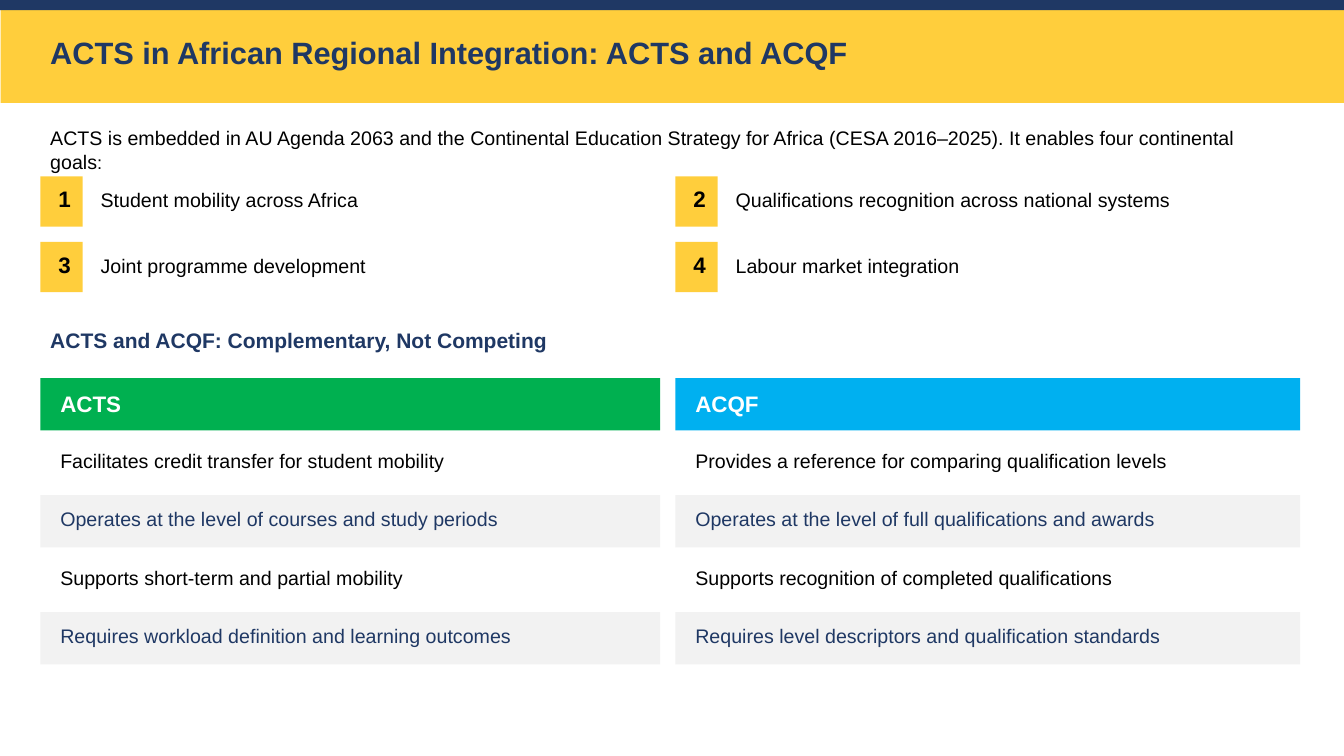
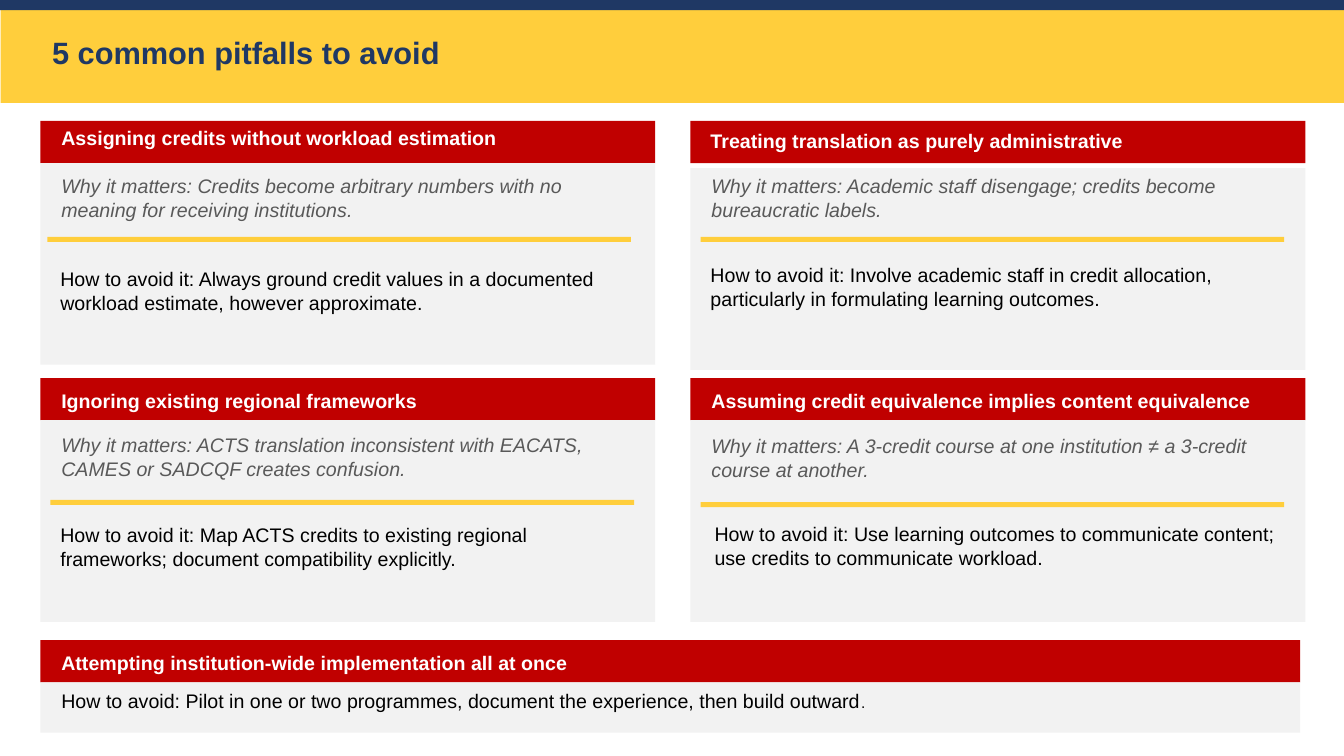
from pptx import Presentation
from pptx.dml.color import RGBColor
from pptx.enum.shapes import MSO_SHAPE as Preset
from pptx.enum.text import MSO_AUTO_SIZE as AutoSize, PP_ALIGN as Align
from pptx.util import Pt

NAVY = RGBColor(0x1F, 0x38, 0x64)
YELLOW = RGBColor(0xFF, 0xCE, 0x3C)
GREEN = RGBColor(0x00, 0xB0, 0x50)
SKY = RGBColor(0x00, 0xB0, 0xF0)
RED = RGBColor(0xC0, 0x00, 0x00)
PALE = RGBColor(0xF2, 0xF2, 0xF2)
GREY = RGBColor(0x59, 0x59, 0x59)
BLACK = RGBColor(0x00, 0x00, 0x00)
WHITE = RGBColor(0xFF, 0xFF, 0xFF)

WIDTH, HEIGHT = 960, 540
MARGIN = 28.8
FULL_WIDTH = 900

GOALS = [
    "Student mobility across Africa",
    "Qualifications recognition across national systems",
    "Joint programme development",
    "Labour market integration",
]
FRAMEWORKS = [
    (MARGIN, 442.8, GREEN, "ACTS", [
        "Facilitates credit transfer for student mobility",
        "Operates at the level of courses and study periods",
        "Supports short-term and partial mobility",
        "Requires workload definition and learning outcomes",
    ]),
    (482.4, 446.4, SKY, "ACQF", [
        "Provides a reference for comparing qualification levels",
        "Operates at the level of full qualifications and awards",
        "Supports recognition of completed qualifications",
        "Requires level descriptors and qualification standards",
    ]),
]
PITFALLS = [
    ("Assigning credits without workload estimation",
     "Why it matters: Credits become arbitrary numbers with no meaning for "
     "receiving institutions.",
     "How to avoid it: Always ground credit values in a documented workload "
     "estimate, however approximate.",
     {"head": (7.9, 0), "body": 30.2, "why": 34.6,
      "rule": (5, 82.8), "how": (7.2, 100.8)}),
    ("Treating translation as purely administrative",
     "Why it matters: Academic staff disengage; credits become bureaucratic "
     "labels.",
     "How to avoid it: Involve academic staff in credit allocation, "
     "particularly in formulating learning outcomes.",
     {"head": (7.2, 2.2), "body": 33.8, "why": 34.6,
      "rule": (7.2, 82.8), "how": (7.2, 97.9)}),
    ("Ignoring existing regional frameworks",
     "Why it matters: ACTS translation inconsistent with EACATS, CAMES or "
     "SADCQF creates confusion.",
     "How to avoid it: Map ACTS credits to existing regional frameworks; "
     "document compatibility explicitly.",
     {"head": (7.9, 4.3), "body": 30.2, "why": 36,
      "rule": (7.2, 87.1), "how": (7.2, 100.1)}),
    ("Assuming credit equivalence implies content equivalence",
     "Why it matters: A 3-credit course at one institution ≠ a 3-credit "
     "course at another.",
     "How to avoid it: Use learning outcomes to communicate content; use "
     "credits to communicate workload.",
     {"head": (7.9, 4.3), "body": 30.2, "why": 36.7,
      "rule": (7.2, 88.6), "how": (10.1, 99.4)}),
]


class Deck:
    font = "Arial"
    body_size = 14

    def __init__(self):
        self.prs = Presentation()
        self.prs.slide_width, self.prs.slide_height = Pt(WIDTH), Pt(HEIGHT)
        self.slide = None

    def new_slide(self, title, title_left=MARGIN):
        self.slide = self.prs.slides.add_slide(self.prs.slide_layouts[6])
        self.band(0.5, 0, WIDTH, 73.5, YELLOW)
        self.band(0, 0, WIDTH, 7.2, NAVY)
        self.text(title_left, 20.9, 864, 33.8, title, NAVY, 22, bold=True)

    def band(self, left, top, width, height, color):
        band = self.slide.shapes.add_shape(
            Preset.RECTANGLE, Pt(left), Pt(top), Pt(width), Pt(height))
        band.shadow.inherit = False
        band.fill.solid()
        band.fill.fore_color.rgb = color
        band.line.fill.background()

    def text(self, left, top, width, height, words, color=BLACK,
             size=body_size, bold=False, italic=False, align=Align.LEFT,
             ending="", ending_size=None):
        box = self.slide.shapes.add_textbox(
            Pt(left), Pt(top), Pt(width), Pt(height))
        frame = box.text_frame
        frame.word_wrap = True
        frame.auto_size = AutoSize.SHAPE_TO_FIT_TEXT
        paragraph = frame.paragraphs[0]
        paragraph.alignment = align
        for part, part_size in ((words, size), (ending, ending_size)):
            if part:
                run = paragraph.add_run()
                run.text = part
                run.font.name = self.font
                run.font.size = Pt(part_size)
                run.font.bold = bold
                run.font.italic = italic
                run.font.color.rgb = color

    def goal(self, left, top, number, words):
        self.band(left, top, 30.2, 36, YELLOW)
        self.text(left + 2.9, top + 2.9, 28.8, 32.4, str(number),
                  size=16, bold=True, align=Align.CENTER)
        self.text(left + 36, top + 5, 410.4, 32.4, words)

    def framework(self, left, width, color, name, points, top=270, pitch=41.8):
        rows = [(name, color, WHITE, 16)]
        for index, point in enumerate(points):
            fill, ink = (PALE, NAVY) if index % 2 else (WHITE, BLACK)
            rows.append((point, fill, ink, self.body_size))
        for index, (words, fill, ink, size) in enumerate(rows):
            y = top + index * pitch
            self.band(left, y, width, 37.4, fill)
            self.text(left + 7.2, y + 5, 432, 24.5, words, ink, size,
                      bold=index == 0)

    def panel(self, left, top, width, heading, head, body_top, body_height):
        self.band(left, top, width, 30.2, RED)
        self.text(left + head[0], top + head[1], width - 13.7, 24.5,
                  heading, WHITE, bold=True)
        self.band(left, top + body_top, width, body_height, PALE)

    def pitfall(self, left, top, heading, why, how, place):
        self.panel(left, top, 439.2, heading, place["head"], place["body"], 144)
        self.text(left + 7.9, top + place["why"], 425.5, 41, why, GREY,
                  italic=True)
        rule_x, rule_y = place["rule"]
        self.band(left + rule_x, top + rule_y, 416.9, 3.6, YELLOW)
        how_x, how_y = place["how"]
        self.text(left + how_x, top + how_y, 425.5, 41, how)


def integration_slide(deck):
    deck.new_slide("ACTS in African Regional Integration: ACTS and ACQF")
    deck.text(MARGIN, 86.4, FULL_WIDTH, 24.5,
              "ACTS is embedded in AU Agenda 2063 and the Continental Education "
              "Strategy for Africa (CESA 2016–2025). It enables four "
              "continental goals", ending=":", ending_size=13)
    for index, words in enumerate(GOALS):
        row, column = divmod(index, 2)
        deck.goal(MARGIN + column * 453.6, 126 + row * 46.8, index + 1, words)
    deck.text(MARGIN, 230.4, FULL_WIDTH, 28.8,
              "ACTS and ACQF: Complementary, Not Competing", NAVY, 15, bold=True)
    for framework in FRAMEWORKS:
        deck.framework(*framework)


def pitfalls_slide(deck):
    deck.new_slide("5 common pitfalls to avoid", 30.2)
    for index, pitfall in enumerate(PITFALLS):
        row, column = divmod(index, 2)
        deck.pitfall(MARGIN + column * 464.4, 86.4 + row * 183.6, *pitfall)
    deck.panel(MARGIN, 457.2, FULL_WIDTH,
               "Attempting institution-wide implementation all at once",
               (7.9, 4.3), 30.2, 36)
    deck.text(36.7, 488.9, 886.3, 24.5,
              "How to avoid: Pilot in one or two programmes, document the "
              "experience, then build outward", ending=".", ending_size=11)


def main():
    deck = Deck()
    integration_slide(deck)
    pitfalls_slide(deck)
    deck.prs.save("out.pptx")


if __name__ == "__main__":
    main()
